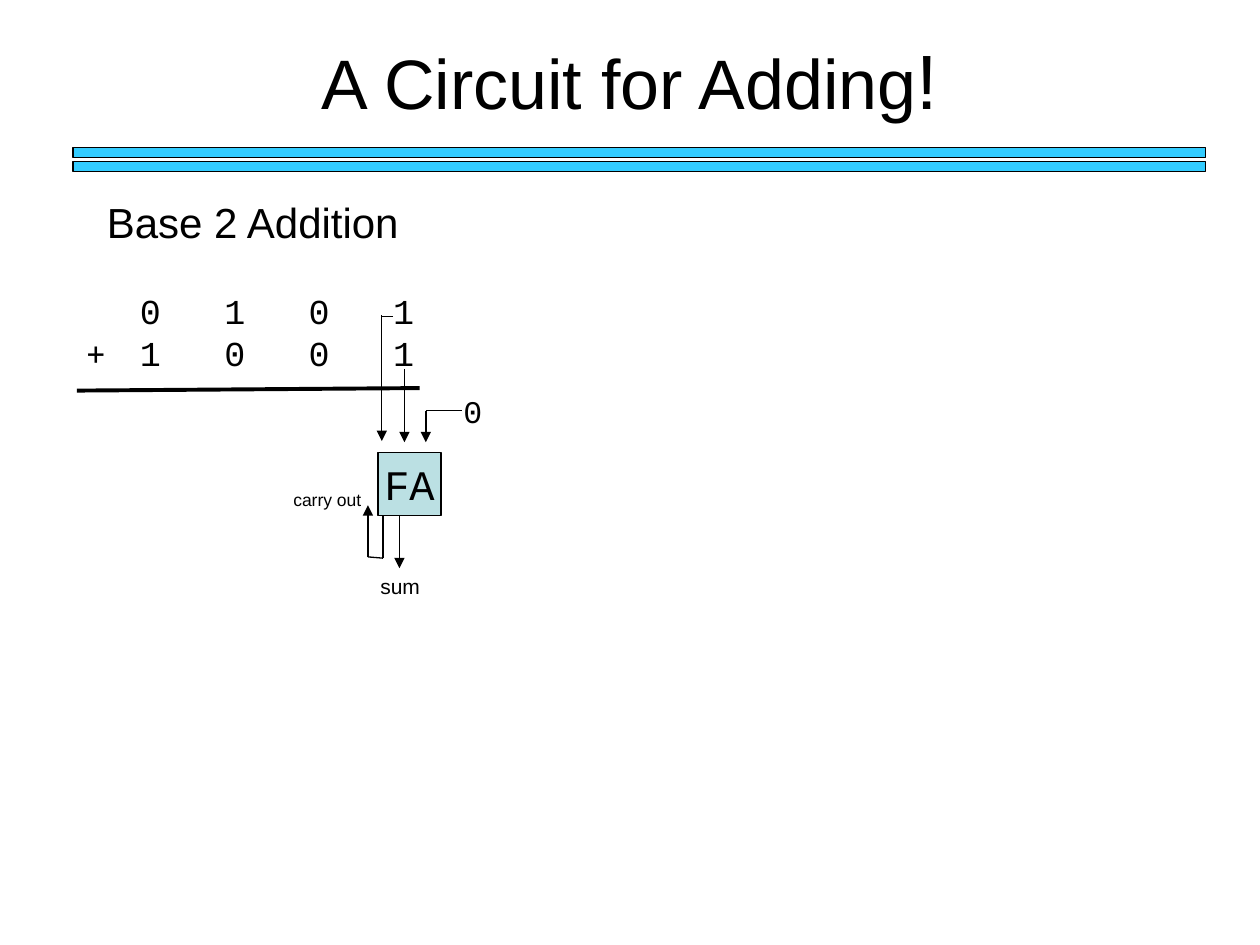
from dataclasses import dataclass

from lxml import etree
from pptx import Presentation
from pptx.dml.color import RGBColor
from pptx.enum import shapes, text
from pptx.oxml import ns
from pptx.util import Inches, Pt

BLACK = RGBColor(0x00, 0x00, 0x00)
SKY = RGBColor(0x33, 0xCC, 0xFF)
PALE_TEAL = RGBColor(0xBB, 0xE0, 0xE3)
SANS, MONO, SYMBOL = "Arial", "Courier New", "Noto Sans Mono"
DIGIT_PITCH = 0.67
DIGIT_INSET = 0.27


@dataclass(frozen=True)
class Label:
    words: str
    left: float
    top: float
    width: float
    height: float
    size: int
    font: str = SANS
    wrap: bool = False


@dataclass(frozen=True)
class Wire:
    start: tuple[float, float]
    end: tuple[float, float]
    arrow: bool = False
    weight: float = 0.75


LABELS = [
    Label("Base 2 Addition", 0.75, 1.51, 2.54, 0.5, 24),
    Label("0", 3.58, 3.06, 0.35, 0.4, 18, MONO),
    Label("sum", 2.92, 4.5, 0.52, 0.3, 12),
    Label("carry out", 2.23, 3.83, 0.77, 0.27, 10, wrap=True),
    Label("+", 0.58, 2.59, 0.33, 0.43, 20, SYMBOL, wrap=True),
]
OPERANDS = ["0101", "1001"]
SUM_RULE = Wire((0.61, 3.1), (3.33, 3.08), weight=2.25)
CARRY_IN = Wire((3.38, 3.26), (3.67, 3.26))
ADDER_WIRES = [
    # Inputs: second digit, first digit, carry in
    Wire((3.21, 2.93), (3.21, 3.51), arrow=True),
    Wire((3.12, 2.51), (3.03, 2.51)),
    Wire((3.03, 2.5), (3.03, 3.5), arrow=True),
    Wire((3.38, 3.26), (3.38, 3.51), arrow=True),
    # Outputs: sum, then carry out
    Wire((3.17, 4.09), (3.17, 4.51), arrow=True),
    Wire((3.04, 4.09), (3.04, 4.43)),
    Wire((2.92, 4.42), (2.92, 4.01), arrow=True),
    Wire((2.92, 4.42), (3.04, 4.43)),
]


def add_span(para, words: str, size: int, font: str) -> None:
    span = para.add_run()
    span.text = words
    span.font.size = Pt(size)
    span.font.name = font
    span.font.color.rgb = BLACK


def add_text_box(parent, left: float, top: float, width: float, height: float,
                 wrap: bool = True):
    box = parent.add_textbox(Inches(left), Inches(top), Inches(width), Inches(height))
    box.text_frame.word_wrap = wrap
    return box.text_frame


def add_label(parent, label: Label) -> None:
    frame = add_text_box(parent, label.left, label.top, label.width, label.height,
                         label.wrap)
    frame.auto_size = text.MSO_AUTO_SIZE.SHAPE_TO_FIT_TEXT
    add_span(frame.paragraphs[0], label.words, label.size, label.font)


def add_digits(para, digits: str) -> None:
    """Set the digits on evenly spaced tab stops."""
    props = para._p.get_or_add_pPr()
    stops = etree.SubElement(props, ns.qn("a:tabLst"))
    for column in range(1, len(digits)):
        stop = etree.SubElement(stops, ns.qn("a:tab"))
        stop.set("pos", str(Inches(column * DIGIT_PITCH)))
        stop.set("algn", "l")
    add_span(para, "\t".join(digits), 20, MONO)


def add_wire(parent, wire: Wire) -> None:
    line = parent.add_connector(
        shapes.MSO_CONNECTOR.STRAIGHT,
        *(Inches(value) for value in wire.start + wire.end))
    line.line.color.rgb = BLACK
    line.line.width = Pt(wire.weight)
    if wire.arrow:
        tail = etree.SubElement(line.line._get_or_add_ln(), ns.qn("a:tailEnd"))
        tail.set("type", "triangle")
    etree.SubElement(line._element.spPr, ns.qn("a:effectLst"))


def add_block(parent, left: float, top: float, width: float, height: float,
              color: RGBColor):
    block = parent.add_shape(shapes.MSO_SHAPE.RECTANGLE, Inches(left), Inches(top),
                             Inches(width), Inches(height))
    block.shadow.inherit = False
    block.fill.solid()
    block.fill.fore_color.rgb = color
    block.line.color.rgb = BLACK
    block.line.width = Pt(0.75)
    return block


def main() -> None:
    deck = Presentation()
    deck.slide_width, deck.slide_height = Inches(10), Inches(7.5)
    page = deck.slides.add_slide(deck.slide_layouts[6])

    # Title
    title = add_text_box(page.shapes, 0.75, 0, 8.5, 1.25)
    title.vertical_anchor = text.MSO_ANCHOR.MIDDLE
    heading = title.paragraphs[0]
    heading.alignment = text.PP_ALIGN.CENTER
    add_span(heading, "A Circuit for Adding", 40, SANS)
    add_span(heading, "!", 44, SANS)

    # Double bar under the title
    bars = page.shapes.add_group_shape().shapes
    for top in (1.17, 1.28):
        add_block(bars, 0.58, top, 8.99, 0.08, SKY)

    # Binary addition
    for label in LABELS:
        add_label(page.shapes, label)
    sums = add_text_box(page.shapes, 0.84, 2.25, 2.57, 0.77)
    sums.margin_left = Inches(DIGIT_INSET)
    sums.margin_right = 0
    for row, digits in enumerate(OPERANDS):
        add_digits(sums.add_paragraph() if row else sums.paragraphs[0], digits)
    add_wire(page.shapes, SUM_RULE)
    add_wire(page.shapes, CARRY_IN)

    # Full adder with its wires
    adder = page.shapes.add_group_shape().shapes
    frame = add_block(adder, 3, 3.59, 0.5, 0.5, PALE_TEAL).text_frame
    frame.word_wrap = False
    frame.vertical_anchor = text.MSO_ANCHOR.MIDDLE
    frame.paragraphs[0].alignment = text.PP_ALIGN.CENTER
    add_span(frame.paragraphs[0], "FA", 24, MONO)
    for wire in ADDER_WIRES:
        add_wire(adder, wire)

    deck.save("out.pptx")


if __name__ == "__main__":
    main()
